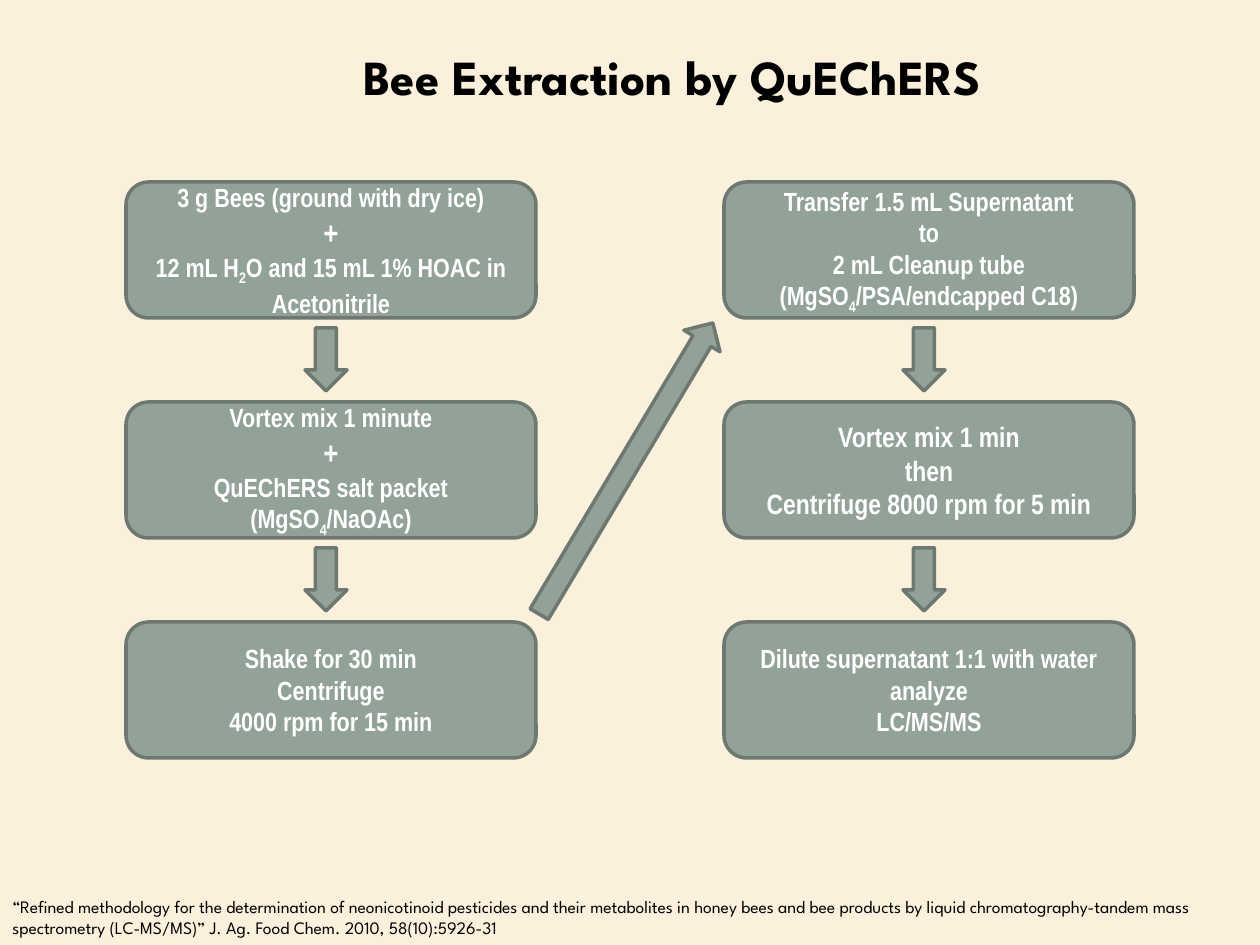
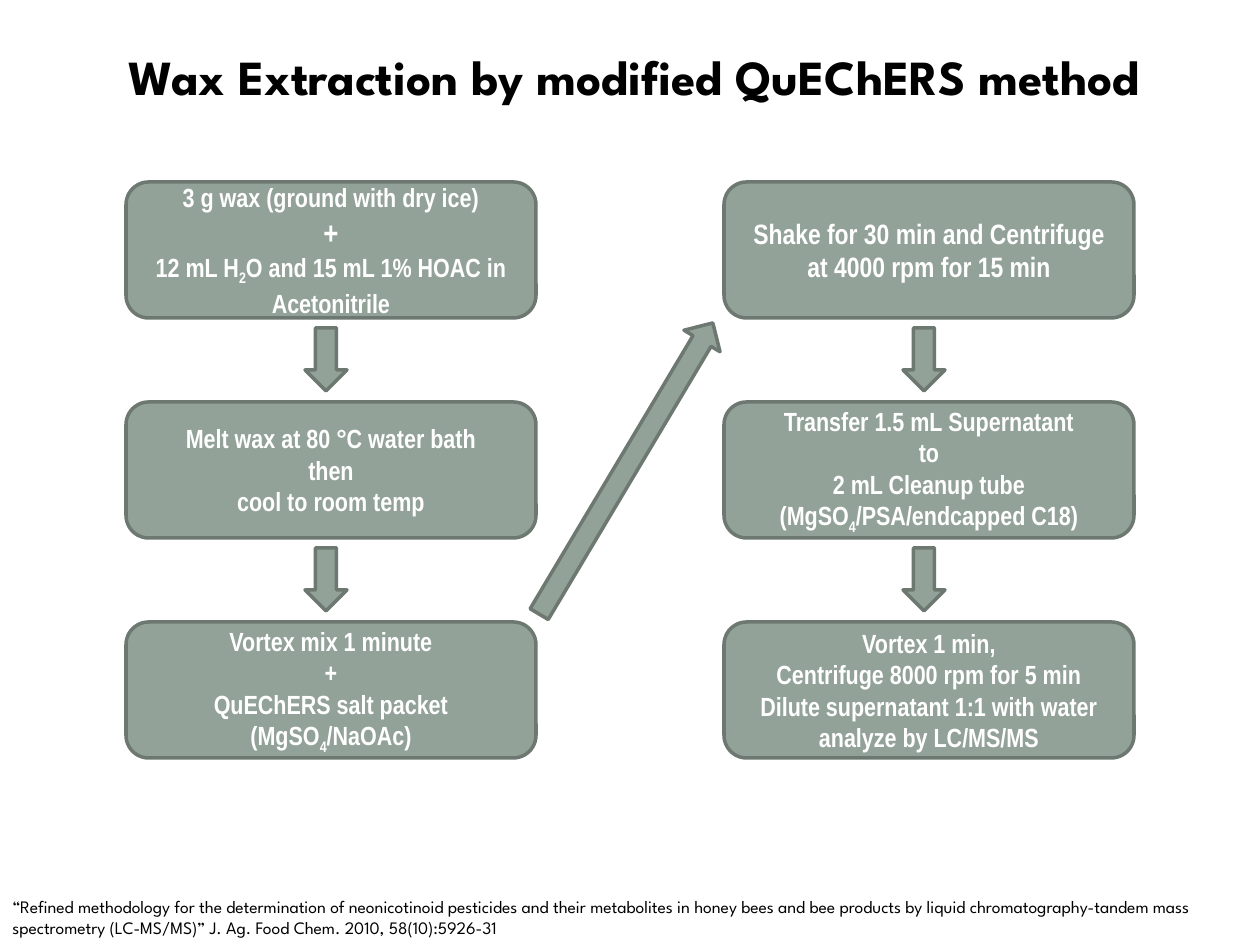
from dataclasses import dataclass

from lxml import etree
from pptx import Presentation
from pptx import util as u
from pptx.dml.color import RGBColor
from pptx.enum import shapes, text
from pptx.oxml.ns import qn

PX_PER_INCH = 126
HEADING_FONT, STEP_FONT = "League Spartan", "Arial Narrow"
CREAM, WHITE, BLACK = "FAF0DB", "FFFFFF", "000000"
SAGE, DARK_SAGE = "93A299", "6D7871"

# Flow chart grid, in px
COLUMN_LEFTS = (126, 724)
ROW_TOP, ROW_PITCH = 182, 220
STEP_WIDTH, STEP_HEIGHT = 410, 136
ARROW_WIDTH, ARROW_HEIGHT, ARROW_GAP = 42, 63, 10

CITATION = (
    "“Refined methodology for the determination of neonicotinoid pesticides and their "
    "metabolites in honey bees and bee products by liquid chromatography-tandem mass "
    "spectrometry (LC-MS/MS)” J. Ag. Food Chem. 2010, 58(10):5926-31"
)


@dataclass
class Step:
    """Lines of one step; an underscore makes the next character a subscript."""
    lines: tuple
    size: int = 15
    plus_size: int = 15
    end_size: int = 15


def px(*lengths):
    return [u.Emu(round(length * 914400 / PX_PER_INCH)) for length in lengths]


def colour(code):
    return RGBColor.from_string(code)


def add_span(para, words, font, size, code, bold=False, subscript=False):
    span = para.add_run()
    span.text = words
    span.font.name = font
    span.font.size = u.Pt(size)
    span.font.bold = bold
    span.font.color.rgb = colour(code)
    if subscript:
        span.font._element.set("baseline", "-25000")


def add_formula(para, line, size):
    """Write a line run by run, lowering each character after an underscore."""
    first, *rest = line.split("_")
    add_span(para, first, STEP_FONT, size, WHITE, True)
    for part in rest:
        add_span(para, part[0], STEP_FONT, size, WHITE, True, subscript=True)
        add_span(para, part[1:], STEP_FONT, size, WHITE, True)


def add_sage_shape(page, kind, left, top, width, height):
    shape = page.shapes.add_shape(kind, *px(left, top, width, height))
    shape.shadow.inherit = False
    shape.fill.solid()
    shape.fill.fore_color.rgb = colour(SAGE)
    shape.line.color.rgb = colour(DARK_SAGE)
    shape.line.width = u.Pt(2)
    return shape


def add_step(page, step, left, top):
    box = add_sage_shape(page, shapes.MSO_SHAPE.ROUNDED_RECTANGLE,
                         left, top, STEP_WIDTH, STEP_HEIGHT)
    frame = box.text_frame
    frame.word_wrap = True
    frame.vertical_anchor = text.MSO_ANCHOR.MIDDLE
    for number, line in enumerate(step.lines):
        para = frame.add_paragraph() if number else frame.paragraphs[0]
        para.alignment = text.PP_ALIGN.CENTER
        add_formula(para, line, step.plus_size if line == "+" else step.size)
    if step.end_size != step.size:
        etree.SubElement(para._p, qn("a:endParaRPr"), sz=str(step.end_size * 100))


def add_arrow(page, left, top, height=ARROW_HEIGHT, rotation=0):
    arrow = add_sage_shape(page, shapes.MSO_SHAPE.DOWN_ARROW,
                           left, top, ARROW_WIDTH, height)
    arrow.rotation = rotation


def add_flow(page, columns):
    """Two columns of steps, read downwards and joined by a diagonal arrow."""
    arrow_inset = (STEP_WIDTH - ARROW_WIDTH) // 2 - 5
    for left, steps in zip(COLUMN_LEFTS, columns):
        for row, step in enumerate(steps):
            top = ROW_TOP + row * ROW_PITCH
            add_step(page, step, left, top)
            if row < len(steps) - 1:
                add_arrow(page, left + arrow_inset, top + STEP_HEIGHT + ARROW_GAP)
    add_arrow(page, 605, 299, 339, 210.8)


def add_title(page, words, left, width):
    title = page.shapes.title
    title.left, title.top, title.width, title.height = px(left, 40, width, 72)
    frame = title.text_frame
    frame.word_wrap = True
    frame.auto_size = text.MSO_AUTO_SIZE.NONE
    frame.vertical_anchor = text.MSO_ANCHOR.TOP
    para = frame.paragraphs[0]
    para.alignment = text.PP_ALIGN.CENTER
    add_span(para, words, HEADING_FONT, 28, BLACK, True)


def add_citation(page):
    box = page.shapes.add_textbox(*px(0, 890, 1260, 55))
    box.text_frame.word_wrap = True
    add_span(box.text_frame.paragraphs[0], CITATION, HEADING_FONT, 10, BLACK)


def add_page(deck, background, title, title_left, title_width, columns):
    page = deck.slides.add_slide(deck.slide_layouts[5])
    page.background.fill.solid()
    page.background.fill.fore_color.rgb = colour(background)
    add_title(page, title, title_left, title_width)
    add_citation(page)
    add_flow(page, columns)


def solvent_step(sample):
    return Step((f"3 g {sample} (ground with dry ice)", "+",
                 "12 mL H_2O and 15 mL 1% HOAC in Acetonitrile"),
                plus_size=18, end_size=18)


def salt_step(plus_size):
    return Step(("Vortex mix 1 minute", "+", "QuEChERS salt packet (MgSO_4/NaOAc)"),
                plus_size=plus_size)


def main():
    deck = Presentation()
    deck.slide_width, deck.slide_height = px(1260, 945)
    cleanup = Step(("Transfer 1.5 mL Supernatant", "to",
                    "2 mL Cleanup tube (MgSO_4/PSA/endcapped C18)"))

    # Bees
    add_page(deck, CREAM, "Bee Extraction by QuEChERS", 116, 1112, (
        (solvent_step("Bees"),
         salt_step(18),
         Step(("Shake for 30 min", "Centrifuge", "4000 rpm for 15 min"))),
        (cleanup,
         Step(("Vortex mix 1 min", "then", "Centrifuge 8000 rpm for 5 min"), size=16),
         Step(("Dilute supernatant 1:1 with water", "analyze", "LC/MS/MS"))),
    ))

    # Wax
    add_page(deck, WHITE, "Wax Extraction by modified QuEChERS method", 32, 1204, (
        (solvent_step("wax"),
         Step(("Melt wax at 80 °C water bath", "then", "cool to room temp")),
         salt_step(15)),
        (Step(("Shake for 30 min and Centrifuge at 4000 rpm for 15 min",), size=16,
              end_size=16),
         cleanup,
         Step(("Vortex 1 min,", "Centrifuge 8000 rpm for 5 min",
               "Dilute supernatant 1:1 with water", "analyze by LC/MS/MS"))),
    ))
    deck.save("out.pptx")


if __name__ == "__main__":
    main()
